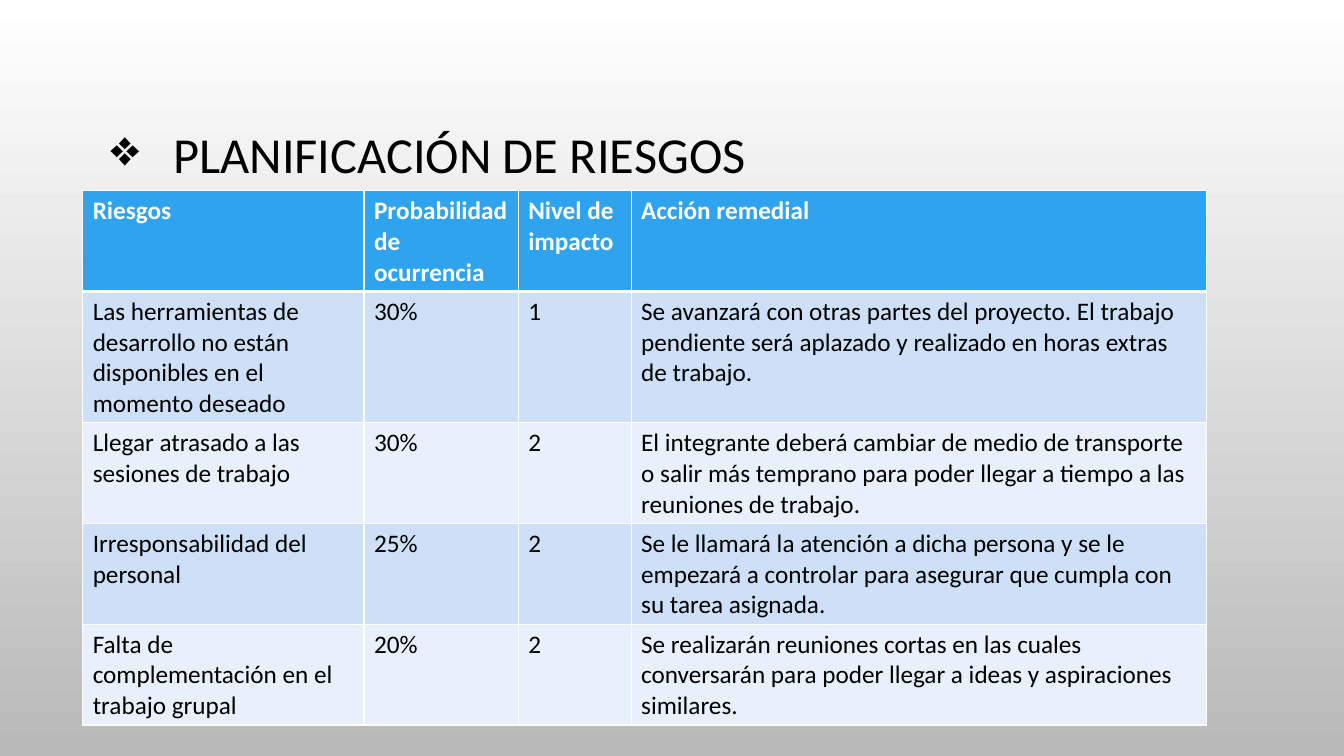
from lxml.etree import SubElement
from pptx import Presentation
from pptx.dml.color import RGBColor
from pptx.enum.text import MSO_ANCHOR
from pptx.oxml.ns import qn
from pptx.util import Inches, Pt

WIDTHS = [2.79, 1.53, 1.12, 5.71]
HEIGHTS = [0.91, 1.18, 0.91, 0.91, 0.91]
RISKS = [
    ("Riesgos", "Probabilidad de ocurrencia", "Nivel de impacto", "Acción remedial"),
    ("Las herramientas de desarrollo no están disponibles en el momento deseado",
     "30%", "1",
     "Se avanzará con otras partes del proyecto. El trabajo pendiente será "
     "aplazado y realizado en horas extras de trabajo."),
    ("Llegar atrasado a las sesiones de trabajo", "30%", "2",
     "El integrante deberá cambiar de medio de transporte o salir más temprano "
     "para poder llegar a tiempo a las reuniones de trabajo."),
    ("Irresponsabilidad del personal", "25%", "2",
     "Se le llamará la atención a dicha persona y se le empezará a controlar "
     "para asegurar que cumpla con su tarea asignada."),
    ("Falta de complementación en el trabajo grupal", "20%", "2",
     "Se realizarán reuniones cortas en las cuales conversarán para poder "
     "llegar a ideas y aspiraciones similares."),
]
TITLE = {"name": "Calibri", "size": Pt(36)}
HEAD = {"name": "Calibri", "size": Pt(18), "bold": True}
BODY = {**HEAD, "bold": False}


def color(code):
    return RGBColor.from_string(code)


def style(font, values, code):
    for key, value in values.items():
        setattr(font, key, value)
    font.color.rgb = color(code)


def backdrop(slide):
    fill = slide.background.fill
    fill.gradient()
    fill.gradient_angle = 270
    for stop, code in zip(fill.gradient_stops, ("FFFFFF", "B9B9B9")):
        stop.color.rgb = color(code)


def bullet(para, mark, indent):
    props = para._p.get_or_add_pPr()
    props.set("marL", str(Inches(indent)))
    props.set("indent", str(-Inches(indent)))
    SubElement(props, qn("a:buChar")).set("char", mark)


def title(slide, text):
    box = slide.shapes.add_textbox(Inches(1), Inches(0.68), Inches(11.33), Inches(1.75))
    frame = box.text_frame
    frame.word_wrap = True
    frame.vertical_anchor = MSO_ANCHOR.MIDDLE
    para = frame.paragraphs[0]
    para.text = text
    para.line_spacing = 0.9
    bullet(para, "❖", 0.62)
    style(para.runs[0].font, TITLE, "000000")


def border(cell, widths):
    props = cell._tc.get_or_add_tcPr()
    for side, width in widths.items():
        line = SubElement(props, qn(f"a:ln{side}"), w=str(Pt(width)))
        fill = SubElement(line, qn("a:solidFill"))
        SubElement(fill, qn("a:srgbClr"), val="FFFFFF")


def grid(slide, rows):
    frame = slide.shapes.add_table(
        len(rows), len(WIDTHS), Inches(0.82), Inches(1.89),
        Inches(sum(WIDTHS)), Inches(sum(HEIGHTS)))
    table = frame.table
    for column, width in zip(table.columns, WIDTHS):
        column.width = Inches(width)
    for row, height in zip(table.rows, HEIGHTS):
        row.height = Inches(height)
    for i, texts in enumerate(rows):
        # Header row first, then alternating bands
        shade = "2FA3EE" if i == 0 else ("E8F0FC", "CDE0F8")[i % 2]
        font, ink = (HEAD, "FFFFFF") if i == 0 else (BODY, "000000")
        edges = {"L": 1, "R": 1, "T": 3 if i == 1 else 1, "B": 3 if i == 0 else 1}
        for j, text in enumerate(texts):
            cell = table.cell(i, j)
            cell.text = text
            style(cell.text_frame.paragraphs[0].runs[0].font, font, ink)
            border(cell, edges)
            cell.fill.solid()
            cell.fill.fore_color.rgb = color(shade)


def main():
    deck = Presentation()
    deck.slide_width, deck.slide_height = Inches(13.33), Inches(7.5)
    slide = deck.slides.add_slide(deck.slide_layouts[6])
    backdrop(slide)
    # Heading and risk table
    title(slide, "PLANIFICACIÓN DE RIESGOS")
    grid(slide, RISKS)
    deck.save("out.pptx")


if __name__ == "__main__":
    main()
